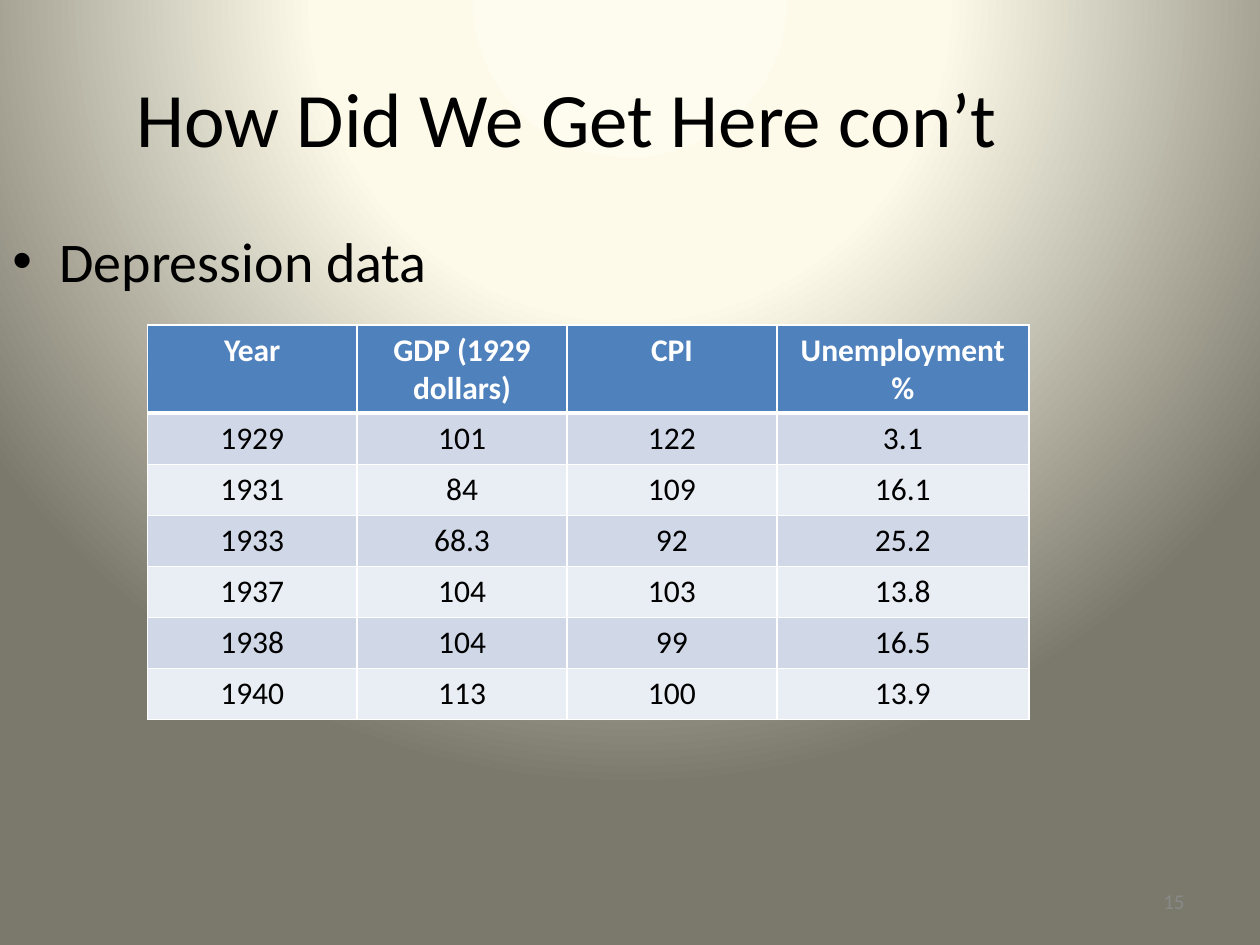
from pptx import Presentation
from pptx.dml.color import RGBColor as RGB
from pptx.enum.text import MSO_ANCHOR as Anchor, PP_ALIGN as Align
from pptx.oxml import parse_xml
from pptx.oxml.ns import nsdecls
from pptx.util import Cm, Pt

BLACK = RGB(0x00, 0x00, 0x00)
WHITE = RGB(0xFF, 0xFF, 0xFF)
GREY = RGB(0x89, 0x89, 0x89)
BLUE = RGB(0x4F, 0x81, 0xBD)
BANDS = (RGB(0xD0, 0xD8, 0xE8), RGB(0xE9, 0xED, 0xF4))
GLOW = (
    (0, RGB(0xFE, 0xFC, 0xEE)),
    (40, RGB(0xFD, 0xFA, 0xEA)),
    (100, RGB(0x7B, 0x79, 0x6B)),
)
WIDTHS = (4.23, 4.23, 4.23, 5.08)
ROW = 1.03
DATA = (
    ("Year", "GDP (1929 dollars)", "CPI", "Unemployment %"),
    ("1929", "101", "122", "3.1"),
    ("1931", "84", "109", "16.1"),
    ("1933", "68.3", "92", "25.2"),
    ("1937", "104", "103", "13.8"),
    ("1938", "104", "99", "16.5"),
    ("1940", "113", "100", "13.9"),
)


def paint(slide):
    """Fill the background with a round gradient."""
    stops = "".join(
        f'<a:gs pos="{pos * 1000}"><a:srgbClr val="{tone}"/></a:gs>'
        for pos, tone in GLOW
    )
    slide.element.cSld.insert(0, parse_xml(
        f'<p:bg {nsdecls("p", "a")}><p:bgPr><a:gradFill rotWithShape="1">'
        f'<a:gsLst>{stops}</a:gsLst><a:path path="circle">'
        '<a:fillToRect l="50000" t="-80000" r="50000" b="180000"/></a:path>'
        '</a:gradFill><a:effectLst/></p:bgPr></p:bg>'))


def write(frame, text, size, color=BLACK, align=Align.LEFT, bold=False):
    """Add one run to the first paragraph and return the paragraph."""
    para = frame.paragraphs[0]
    para.alignment = align
    run = para.add_run()
    run.text = text
    font = run.font
    font.name, font.size, font.bold = "Calibri", Pt(size), bold
    font.color.rgb = color
    return para


def add_title(slide, text):
    """Place and fill the title."""
    title = slide.shapes.title
    title.left, title.top = Cm(0), Cm(0.76)
    title.width, title.height = Cm(22.86), Cm(3.18)
    title.text_frame.vertical_anchor = Anchor.MIDDLE
    write(title.text_frame, text, 44, align=Align.CENTER)


def add_box(slide, left, top, width, height):
    """Add a wrapping text box and return its frame."""
    box = slide.shapes.add_textbox(Cm(left), Cm(top), Cm(width), Cm(height))
    box.text_frame.word_wrap = True
    return box.text_frame


def add_point(slide, text):
    """Add the bulleted line."""
    para = write(add_box(slide, 0, 4.45, 22.86, 12.57), text, 32)
    para.space_before = Pt(6.4)
    props = para._p.get_or_add_pPr()
    props.set("marL", str(Cm(0.95)))
    props.set("indent", str(-Cm(0.95)))
    props.append(parse_xml(f'<a:buFont {nsdecls("a")} typeface="Arial"/>'))
    props.append(parse_xml(f'<a:buChar {nsdecls("a")} char="•"/>'))


def edge(cell, side, width):
    """Draw one white cell border."""
    cell._tc.get_or_add_tcPr().append(parse_xml(
        f'<a:ln{side} {nsdecls("a")} w="{Pt(width)}"><a:solidFill>'
        f'<a:srgbClr val="{WHITE}"/></a:solidFill></a:ln{side}>'))


def add_grid(slide):
    """Add the table of Depression data."""
    grid = slide.shapes.add_table(
        len(DATA), len(WIDTHS), Cm(2.97), Cm(6.55),
        Cm(sum(WIDTHS)), Cm(ROW * len(DATA))).table
    for col, width in zip(grid.columns, WIDTHS):
        col.width = Cm(width)
    for i, row in enumerate(DATA):
        grid.rows[i].height = Cm(ROW)
        head = i == 0
        for j, text in enumerate(row):
            cell = grid.cell(i, j)
            edge(cell, "L", 1)
            edge(cell, "R", 1)
            edge(cell, "T", 3 if i == 1 else 1)
            edge(cell, "B", 3 if head else 1)
            cell.fill.solid()
            cell.fill.fore_color.rgb = BLUE if head else BANDS[(i - 1) % 2]
            write(cell.text_frame, text, 18, WHITE if head else BLACK,
                  Align.CENTER, head)


def add_number(slide, text):
    """Add the slide number."""
    frame = add_box(slide, 18.2, 17.66, 5.93, 1.01)
    frame.vertical_anchor = Anchor.MIDDLE
    write(frame, text, 12, GREY, Align.RIGHT)


def main():
    """Build and save the slide."""
    deck = Presentation()
    deck.slide_width, deck.slide_height = Cm(25.4), Cm(19.05)
    slide = deck.slides.add_slide(deck.slide_layouts[5])
    paint(slide)
    add_title(slide, "How Did We Get Here con’t")
    add_point(slide, "Depression data")
    add_grid(slide)
    add_number(slide, "15")
    deck.save("out.pptx")


if __name__ == "__main__":
    main()
